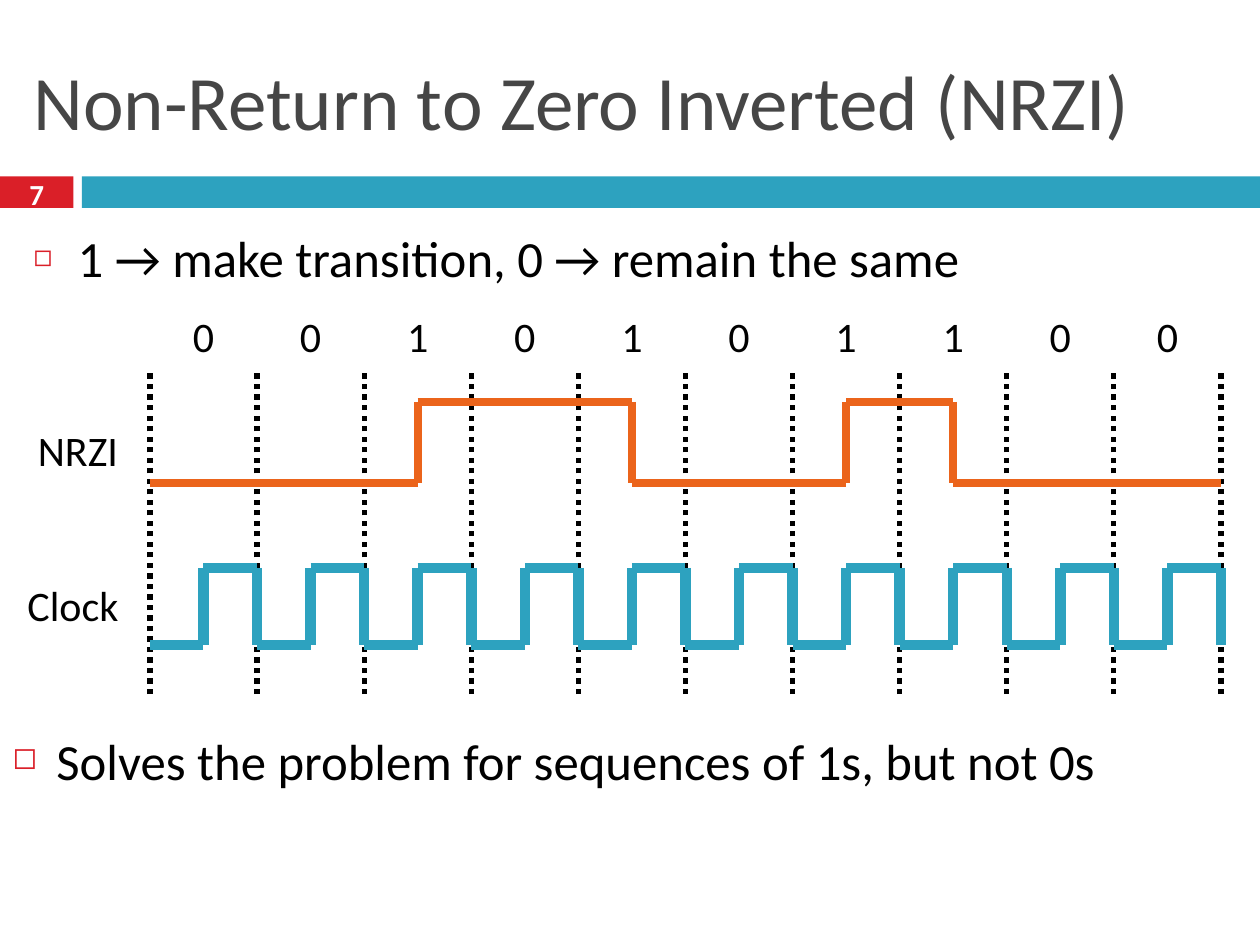
from itertools import pairwise

from lxml.etree import SubElement
from pptx import Presentation
from pptx.dml.color import RGBColor
from pptx.enum.dml import MSO_LINE_DASH_STYLE as Dash
from pptx.enum.shapes import MSO_CONNECTOR_TYPE as Connector, MSO_SHAPE as Shape
from pptx.enum.text import MSO_ANCHOR as Anchor, MSO_AUTO_SIZE as AutoSize, PP_ALIGN as Align
from pptx.oxml.ns import qn
from pptx.util import Pt

COLORS = {
    "title": "464646",
    "text": "000000",
    "white": "FFFFFF",
    "red": "DA1F28",
    "teal": "2DA2BF",
    "orange": "EB641B",
}
BITS = "0010101100"
GRID_LEFT, BIT_WIDTH = 85.7, 61.2
GRID_TOP, GRID_BOTTOM = 211, 396.7
NRZI_HIGH, NRZI_LOW = 229.7, 275.8
CLOCK_HIGH, CLOCK_LOW = 324.5, 368.5


def color(name):
    return RGBColor.from_string(COLORS[name])


def write(frame, text, size, ink="text", bold=False, align=Align.LEFT,
          anchor=Anchor.TOP, wrap=True, bullet=False):
    frame.auto_size = AutoSize.NONE
    frame.word_wrap = wrap
    frame.vertical_anchor = anchor
    para = frame.paragraphs[0]
    para.alignment = align
    span = para.add_run()
    span.text = text
    span.font.name = "Calibri"
    span.font.size = Pt(size)
    span.font.bold = bold
    span.font.color.rgb = color(ink)
    if bullet:
        para.space_before = Pt(7)
        properties = para._p.get_or_add_pPr()
        properties.set("marL", str(Pt(25.2)))
        properties.set("indent", str(Pt(-25.2)))
        tint = SubElement(properties, qn("a:buClr"))
        SubElement(tint, qn("a:srgbClr"), val=COLORS["red"])
        SubElement(properties, qn("a:buSzPct"), val="60000")
        SubElement(properties, qn("a:buChar"), char="◻")


class SlideBuilder:
    def __init__(self, deck):
        self.page = deck.slides.add_slide(deck.slide_layouts[1])
        self.shapes = self.page.shapes

    def placeholder(self, index, left, top, width, height, text, size, **style):
        holder = self.page.placeholders[index]
        holder.left, holder.top = Pt(left), Pt(top)
        holder.width, holder.height = Pt(width), Pt(height)
        write(holder.text_frame, text, size, **style)

    def label(self, left, top, width, height, text, size, **style):
        box = self.shapes.add_textbox(Pt(left), Pt(top), Pt(width), Pt(height))
        write(box.text_frame, text, size, **style)

    def bar(self, left, top, width, height, fill):
        box = self.shapes.add_shape(Shape.RECTANGLE, Pt(left), Pt(top), Pt(width), Pt(height))
        box.shadow.inherit = False
        box.fill.solid()
        box.fill.fore_color.rgb = color(fill)
        box.line.fill.background()

    def line(self, start, end, ink, weight, dash=None):
        edge = self.shapes.add_connector(Connector.STRAIGHT, *map(Pt, start + end))
        edge.line.color.rgb = color(ink)
        edge.line.width = Pt(weight)
        edge.line.dash_style = dash
        SubElement(edge._element.spPr, qn("a:effectLst"))

    def signal(self, points, ink, weight):
        for start, end in pairwise(points):
            self.line(start, end, ink, weight)


def nrzi_points():
    level = NRZI_LOW
    points = [(GRID_LEFT, level)]
    for index, bit in enumerate(BITS):
        if bit == "1":
            middle = GRID_LEFT + (index + 0.5) * BIT_WIDTH
            points.append((middle, level))
            level = NRZI_HIGH if level == NRZI_LOW else NRZI_LOW
            points.append((middle, level))
    return points + [(GRID_LEFT + len(BITS) * BIT_WIDTH, level)]


def clock_points():
    points = [(GRID_LEFT, CLOCK_LOW)]
    for index in range(len(BITS)):
        middle = GRID_LEFT + (index + 0.5) * BIT_WIDTH
        end = GRID_LEFT + (index + 1) * BIT_WIDTH
        points += [(middle, CLOCK_LOW), (middle, CLOCK_HIGH), (end, CLOCK_HIGH), (end, CLOCK_LOW)]
    return points


def main():
    deck = Presentation()
    deck.slide_width, deck.slide_height = Pt(720), Pt(540)
    slide = SlideBuilder(deck)

    slide.bar(0, 100.8, 42, 18, "red")
    slide.bar(46.8, 100.8, 673.2, 18, "teal")
    slide.placeholder(0, 12, 18, 696, 78, "Non-Return to Zero Inverted (NRZI)", 44,
                      ink="title", anchor=Anchor.MIDDLE)
    slide.label(0, 98.6, 42, 24, "7", 16.6, ink="white", bold=True,
                align=Align.CENTER, anchor=Anchor.MIDDLE)
    slide.placeholder(1, 12, 126, 696, 48, "1 → make transition, 0 → remain the same", 29,
                      bullet=True)

    for index in range(len(BITS) + 1):
        x = GRID_LEFT + index * BIT_WIDTH
        slide.line((x, GRID_BOTTOM), (x, GRID_TOP), "text", 3, Dash.ROUND_DOT)
    slide.signal(clock_points(), "teal", 6)
    slide.signal(nrzi_points(), "orange", 4.5)

    for name, left, top, width in (("Clock", 8.6, 327.6, 67), ("NRZI", 14.6, 239, 61)):
        slide.label(left, top, width, 36, name, 24, wrap=False)
    for index, bit in enumerate(BITS):
        middle = GRID_LEFT + (index + 0.5) * BIT_WIDTH
        slide.label(middle - 14, 174.2, 28, 36, bit, 24, align=Align.CENTER, wrap=False)

    slide.label(0, 413.3, 720, 48, "Solves the problem for sequences of 1s, but not 0s", 29,
                bullet=True)
    deck.save("out.pptx")


if __name__ == "__main__":
    main()
